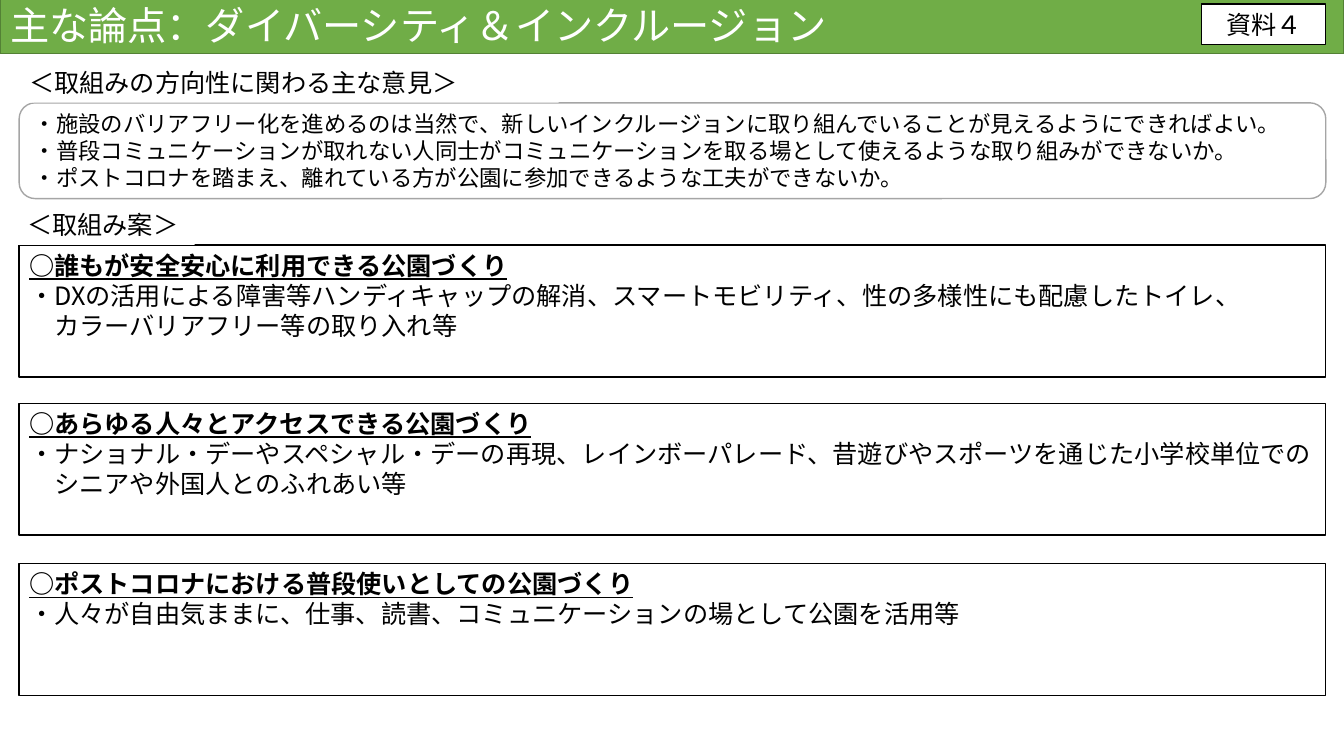
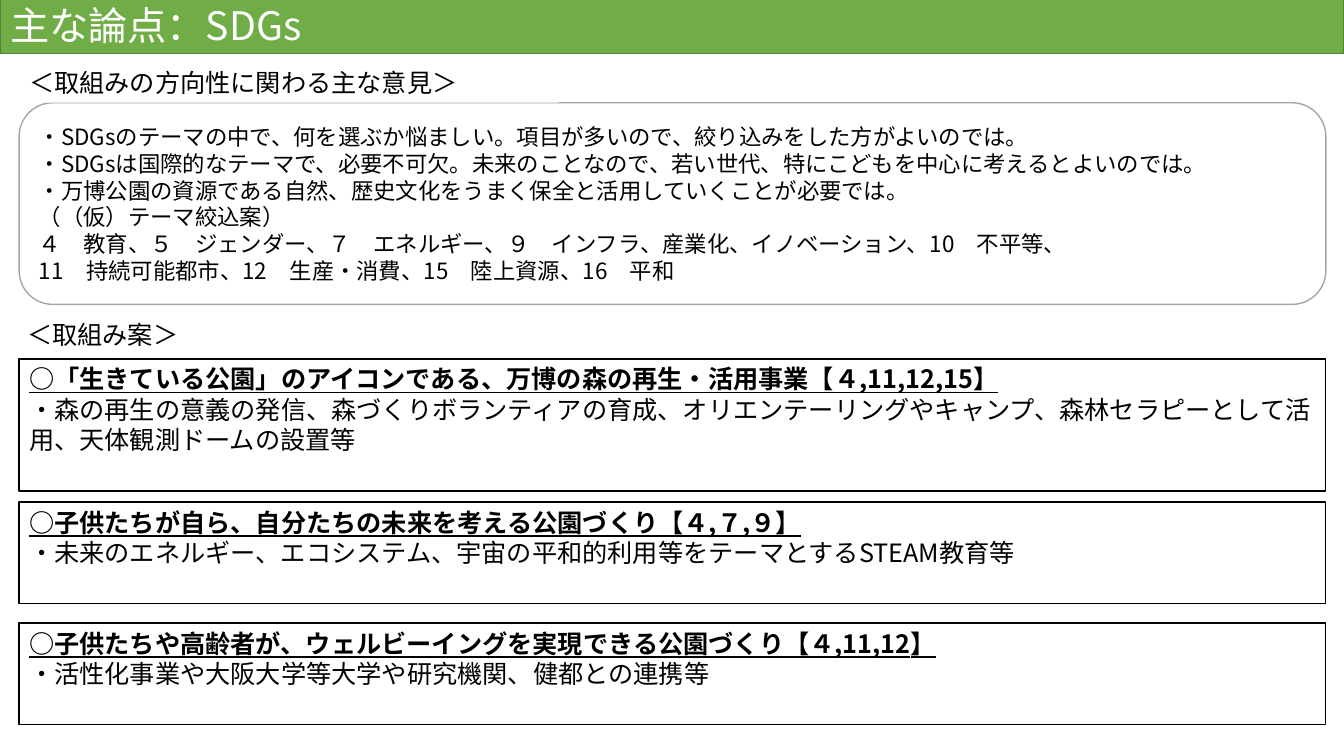
from collections import namedtuple

from lxml import etree
from pptx import Presentation
from pptx.dml.color import RGBColor
from pptx.enum.shapes import MSO_SHAPE
from pptx.enum.text import MSO_ANCHOR, MSO_AUTO_SIZE, PP_ALIGN
from pptx.oxml.ns import qn
from pptx.util import Inches, Pt

RECTANGLE = MSO_SHAPE.RECTANGLE
ROUNDED = MSO_SHAPE.FLOWCHART_ALTERNATE_PROCESS
TOP, MIDDLE = MSO_ANCHOR.TOP, MSO_ANCHOR.MIDDLE
LEFT, CENTER = PP_ALIGN.LEFT, PP_ALIGN.CENTER
NO_RESIZE = MSO_AUTO_SIZE.NONE

GREEN = RGBColor(0x70, 0xAD, 0x47)
DARK_GREEN = RGBColor(0x53, 0x81, 0x35)
GRAY = RGBColor(0xA5, 0xA5, 0xA5)
BLACK = RGBColor(0, 0, 0)
WHITE = RGBColor(255, 255, 255)

FONT = "Noto Sans CJK JP"
SLIDE_WIDTH, SLIDE_HEIGHT = 13.33, 7.5
MARGIN = 0.19
CONTENT_WIDTH = 12.96
LABEL_HEIGHT = 0.4
OPINIONS_TOP = 1.02
CORNER_INSET = 0.29 / 6

TITLE_TEXT = {"size": Pt(28), "color": WHITE}
OPINION_TEXT = {"size": Pt(16)}
PLAIN_TEXT = {"size": Pt(18)}
HEADING_TEXT = {"size": Pt(18), "bold": True, "underline": True}

Box = namedtuple("Box", "left top width height")
Proposal = namedtuple("Proposal", "top height heading lines")

PAGES = [
    {
        "title": "主な論点：ダイバーシティ＆インクルージョン",
        "tag": "資料４",
        "opinions_height": 0.95,
        "opinions": [
            "・施設のバリアフリー化を進めるのは当然で、新しいインクルージョンに取り組んでいることが見えるようにできればよい。",
            "・普段コミュニケーションが取れない人同士がコミュニケーションを取る場として使えるような取り組みができないか。",
            "・ポストコロナを踏まえ、離れている方が公園に参加できるような工夫ができないか。",
        ],
        "label_top": 2.03,
        "proposals": [
            Proposal(2.43, 1.31, "○誰もが安全安心に利用できる公園づくり", [
                "・DXの活用による障害等ハンディキャップの解消、スマートモビリティ、性の多様性にも配慮したトイレ、",
                "　カラーバリアフリー等の取り入れ等",
            ]),
            Proposal(4, 1.31, "○あらゆる人々とアクセスできる公園づくり", [
                "・ナショナル・デーやスペシャル・デーの再現、レインボーパレード、昔遊びやスポーツを通じた小学校単位での",
                "　シニアや外国人とのふれあい等",
            ]),
            Proposal(5.59, 1.31, "○ポストコロナにおける普段使いとしての公園づくり", [
                "・人々が自由気ままに、仕事、読書、コミュニケーションの場として公園を活用等",
            ]),
        ],
    },
    {
        "title": "主な論点：SDGs",
        "tag": None,
        "opinions_height": 2,
        "opinions": [
            "・SDGsのテーマの中で、何を選ぶか悩ましい。項目が多いので、絞り込みをした方がよいのでは。",
            "・SDGsは国際的なテーマで、必要不可欠。未来のことなので、若い世代、特にこどもを中心に考えるとよいのでは。",
            "・万博公園の資源である自然、歴史文化をうまく保全と活用していくことが必要では。",
            "（（仮）テーマ絞込案）",
            "４　教育、５　ジェンダー、７　エネルギー、９　インフラ、産業化、イノベーション、10　不平等、",
            "11　持続可能都市、12　生産・消費、15　陸上資源、16　平和",
        ],
        "label_top": 3.12,
        "proposals": [
            Proposal(3.56, 1.31, "○「生きている公園」のアイコンである、万博の森の再生・活用事業【４,11,12,15】", [
                "・森の再生の意義の発信、森づくりボランティアの育成、オリエンテーリングやキャンプ、森林セラピーとして活用、天体観測ドームの設置等",
            ]),
            Proposal(4.98, 1.01, "○子供たちが自ら、自分たちの未来を考える公園づくり【４,７,９】", [
                "・未来のエネルギー、エコシステム、宇宙の平和的利用等をテーマとするSTEAM教育等",
            ]),
            Proposal(6.18, 1.01, "○子供たちや高齢者が、ウェルビーイングを実現できる公園づくり【４,11,12】", [
                "・活性化事業や大阪大学等大学や研究機関、健都との連携等",
            ]),
        ],
    },
]


def place(shape, box):
    for name, value in box._asdict().items():
        setattr(shape, name, Inches(value))


def paint(shape, fill, line=None, weight=1):
    shape.fill.solid()
    shape.fill.fore_color.rgb = fill
    if line is None:
        shape.line.fill.background()
    else:
        shape.line.color.rgb = line
        shape.line.width = Pt(weight)


def add_box(page, preset, box, line=None, weight=1):
    shape = page.shapes.add_shape(preset, *map(Inches, box))
    shape.shadow.inherit = False
    paint(shape, WHITE, line, weight)
    return shape


def format_span(span, formats):
    for name, value in {"name": FONT, "color": BLACK, **formats}.items():
        if name == "color":
            span.font.color.rgb = value
        else:
            setattr(span.font, name, value)
    east_asian = etree.SubElement(span.font._element, qn("a:ea"))
    east_asian.set("typeface", FONT)


def write(shape, lines, anchor=TOP, align=LEFT):
    frame = shape.text_frame
    settings = {"word_wrap": True, "auto_size": NO_RESIZE, "vertical_anchor": anchor}
    for name, value in settings.items():
        setattr(frame, name, value)
    for index, (text, formats) in enumerate(lines):
        para = frame.paragraphs[0] if index == 0 else frame.add_paragraph()
        para.alignment = align
        para.space_before = Pt(0)
        span = para.add_run()
        span.text = text
        format_span(span, formats)


def remove_bullets(shape):
    for para in shape.text_frame.paragraphs:
        properties = para._p.get_or_add_pPr()
        properties.set("marL", "0")
        properties.set("indent", "0")
        etree.SubElement(properties, qn("a:buNone"))


def title_band(page, box, text):
    title = page.shapes.title
    place(title, box)
    paint(title, GREEN, DARK_GREEN)
    write(title, [(text, TITLE_TEXT)])


def page_tag(page, box, text):
    tag = add_box(page, RECTANGLE, box, BLACK, 0.75)
    write(tag, [(text, PLAIN_TEXT)], MIDDLE, CENTER)


def section_label(page, box, text):
    write(add_box(page, RECTANGLE, box), [(text, PLAIN_TEXT)])


def opinion_panel(page, box, opinions):
    panel = add_box(page, ROUNDED, box, GRAY)
    body = page.placeholders[1]
    body._element.addprevious(panel._element)
    inset = box.height * CORNER_INSET
    place(body, Box(box.left + inset, box.top + inset,
                    box.width - 2 * inset, box.height - 2 * inset))
    write(body, [(text, OPINION_TEXT) for text in opinions], MIDDLE)
    remove_bullets(body)


def proposal_box(page, box, proposal):
    lines = [(proposal.heading, HEADING_TEXT)]
    lines += [(text, PLAIN_TEXT) for text in proposal.lines]
    write(add_box(page, RECTANGLE, box, BLACK), lines)


def build_page(deck, content):
    page = deck.slides.add_slide(deck.slide_layouts[1])
    title_band(page, Box(0, -0.04, SLIDE_WIDTH, 0.57), content["title"])
    section_label(page, Box(MARGIN, 0.62, 5.35, LABEL_HEIGHT),
                  "＜取組みの方向性に関わる主な意見＞")
    opinion_panel(page, Box(MARGIN, OPINIONS_TOP, CONTENT_WIDTH, content["opinions_height"]),
                  content["opinions"])
    for proposal in content["proposals"]:
        proposal_box(page, Box(MARGIN, proposal.top, CONTENT_WIDTH, proposal.height), proposal)
    section_label(page, Box(0.17, content["label_top"], 1.76, LABEL_HEIGHT), "＜取組み案＞")
    if content["tag"]:
        page_tag(page, Box(11.92, 0.04, 1.23, LABEL_HEIGHT), content["tag"])


def main():
    deck = Presentation()
    deck.slide_width = Inches(SLIDE_WIDTH)
    deck.slide_height = Inches(SLIDE_HEIGHT)
    for content in PAGES:
        build_page(deck, content)
    deck.save("out.pptx")


if __name__ == "__main__":
    main()
